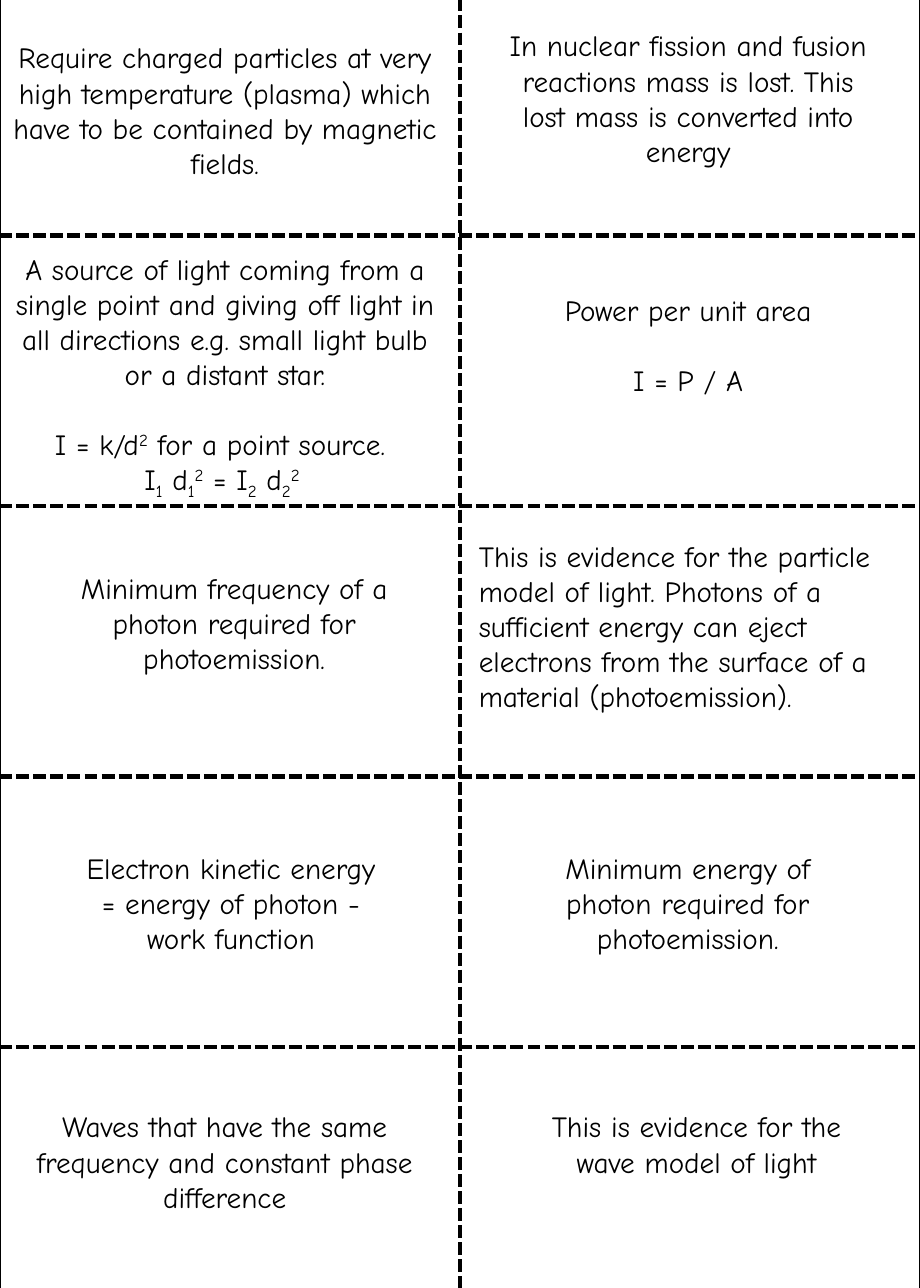
from lxml import etree
from pptx import Presentation
from pptx.dml.color import RGBColor
from pptx.enum import text
from pptx.oxml.ns import qn
from pptx.util import Cm, Pt

COLORS = {"ink": "000000", "paper": "FFFFFF"}
FONT = "Comic Neue"
BLANK_LINE = Pt(21.6)
ROWS, COLS = 5, 2
SUB, SUPER = -25000, 30000
CENTER, LEFT = text.PP_ALIGN.CENTER, text.PP_ALIGN.LEFT

# Each card: left, top, width, height in cm, alignment, paragraphs.
# A paragraph is a list of (wording, baseline shift) runs.
CARDS = [
    (0, 0.74, 9.78, 3.33, CENTER, [[(
        "Require charged particles at very high temperature (plasma) which "
        "have to be contained by magnetic fields.", 0)]]),
    (10.64, 0.48, 8.64, 4.11, CENTER, [[(
        "In nuclear fission and fusion reactions mass is lost. "
        "This lost mass is converted into energy", 0)]]),
    (0, 5.33, 9.78, 5.64, CENTER, [
        [("A source of light coming from a single point and giving off light "
          "in all directions e.g. small light bulb or a distant star.", 0)],
        [("I = k/d", 0), ("2", SUPER), (" for a point source. ", 0)],
        [("I", 0), ("1", SUB), (" d", 0), ("1", SUB), ("2", SUPER),
         (" = I", 0), ("2", SUB), (" d", 0), ("2", SUB), ("2 ", SUPER)]]),
    (10.64, 6.22, 8.64, 3.33, CENTER, [
        [("Power per unit area", 0)], [("I = P / A", 0)]]),
    (1.47, 12.27, 7.24, 3.33, CENTER, [[(
        "Minimum frequency of a photon required for photoemission.", 0)]]),
    (10.16, 11.58, 9.58, 4.88, LEFT, [[(
        "This is evidence for the particle model of light. Photons of a "
        "sufficient energy can eject electrons from the surface of a "
        "material (photoemission).", 0)]]),
    (1.4, 18.36, 7.24, 2.57, CENTER, [[(
        "Electron kinetic energy = energy of photon - work function", 0)]]),
    (11.33, 18.36, 7.24, 2.57, CENTER, [[(
        "Minimum energy of photon required for photoemission.", 0)]]),
    (0.53, 23.98, 8.71, 2.57, CENTER, [[(
        "Waves that have the same frequency and constant phase difference", 0)]]),
    (11.33, 23.98, 7.62, 1.8, CENTER, [[(
        "This is evidence for the wave model of light", 0)]]),
]


def set_border(cell, position, side, outer):
    """Draw a thin solid line on an outer edge, a thick dashed one inside."""
    line = etree.Element(qn(f"a:ln{side}"), w=str(Pt(1 if outer else 3)))
    fill = etree.SubElement(line, qn("a:solidFill"))
    etree.SubElement(fill, qn("a:srgbClr"), val=COLORS["ink"])
    etree.SubElement(line, qn("a:prstDash"), val="solid" if outer else "dash")
    cell._tc.get_or_add_tcPr().insert(position, line)


deck = Presentation()
deck.slide_width, deck.slide_height = Cm(20), Cm(28)
page = deck.slides.add_slide(deck.slide_layouts[6])
page.background.fill.solid()
page.background.fill.fore_color.rgb = RGBColor.from_string(COLORS["paper"])

# Cutting grid
grid = page.shapes.add_table(ROWS, COLS, 0, Cm(-0.76), Cm(20), Cm(29.4)).table
grid.first_row = grid.horz_banding = False
for row in range(ROWS):
    for col in range(COLS):
        cell = grid.cell(row, col)
        cell.fill.background()
        edges = {"L": col == 0, "R": col == COLS - 1,
                 "T": row == 0, "B": row == ROWS - 1}
        for position, (side, outer) in enumerate(edges.items()):
            set_border(cell, position, side, outer)

# Card wording
for left, top, width, height, align, paragraphs in CARDS:
    box = page.shapes.add_textbox(Cm(left), Cm(top), Cm(width), Cm(height))
    frame = box.text_frame
    frame.word_wrap = True
    frame.auto_size = text.MSO_AUTO_SIZE.SHAPE_TO_FIT_TEXT
    for index, runs in enumerate(paragraphs):
        para = frame.add_paragraph() if index else frame.paragraphs[0]
        para.alignment = align
        if index == 1:
            para.space_before = BLANK_LINE
        for wording, shift in runs:
            span = para.add_run()
            span.text = wording
            span.font.name = FONT
            span.font.size = Pt(18)
            span.font.color.rgb = RGBColor.from_string(COLORS["ink"])
            if shift:
                span._r.get_or_add_rPr().set("baseline", str(shift))

deck.save("out.pptx")
